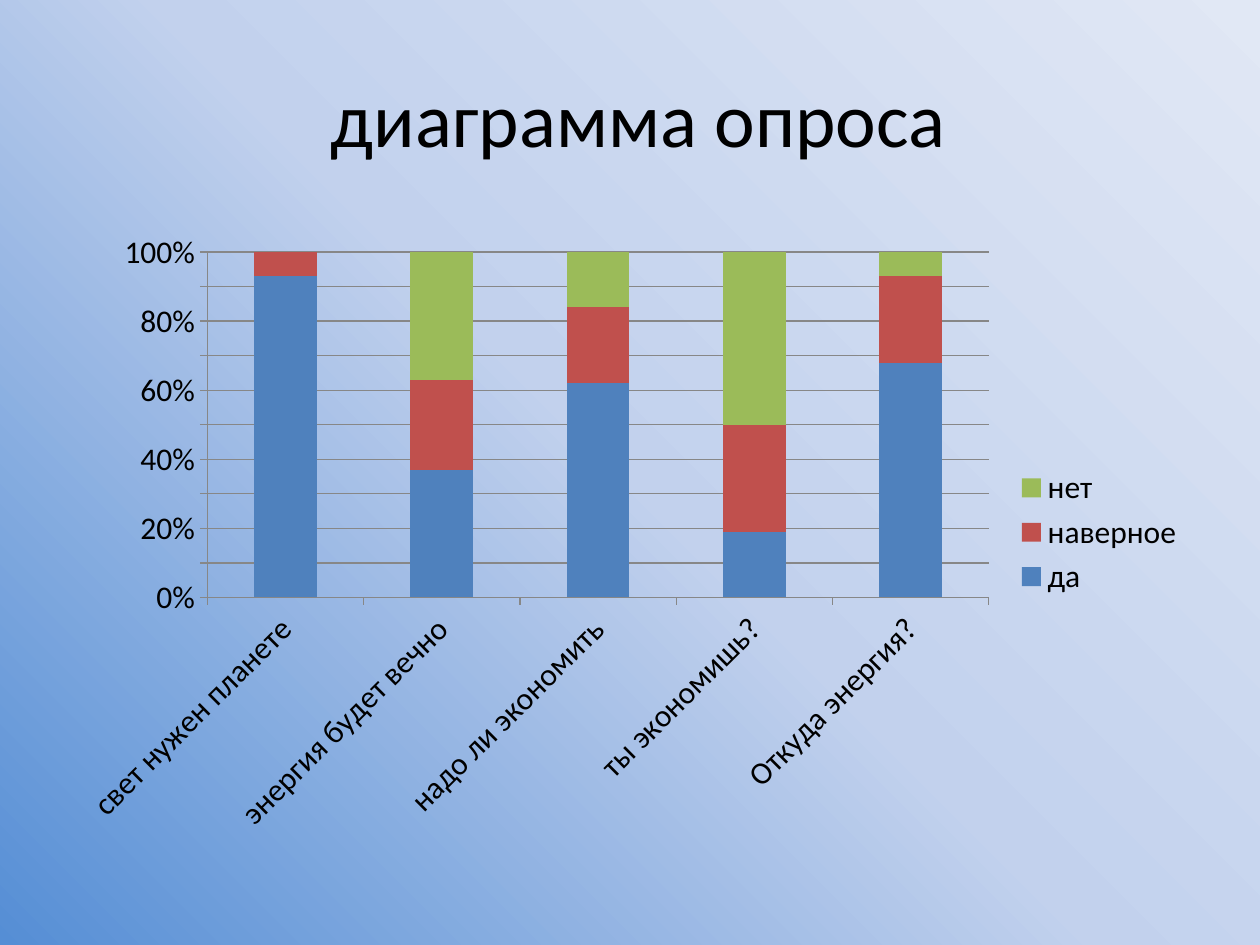
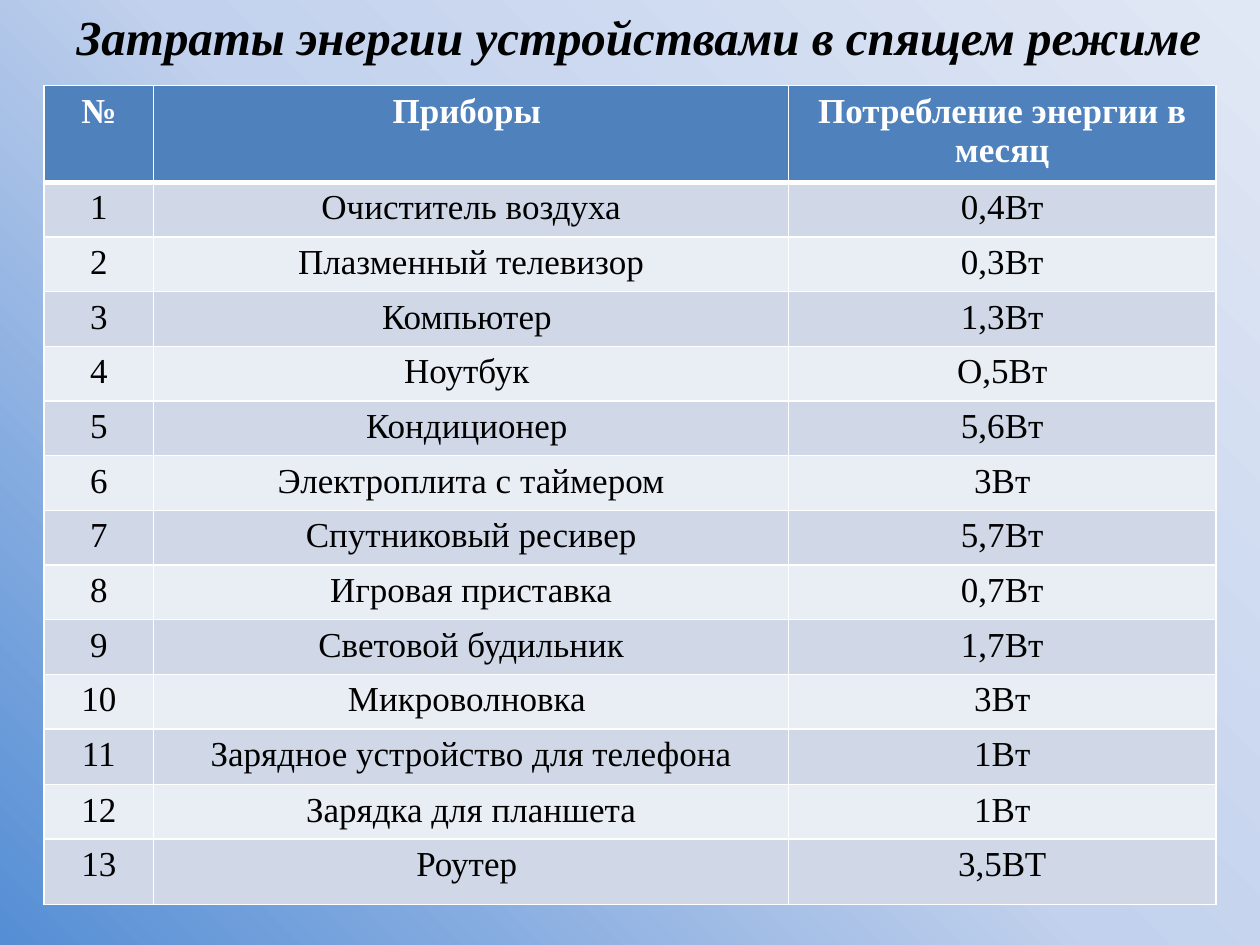
"""Builds two slides on energy saving: a survey chart and a table of standby consumption."""
import copy

import lxml.etree
import pptx
import pptx.chart.data
import pptx.dml.color
import pptx.enum.chart
import pptx.enum.text
import pptx.oxml.ns
import pptx.util
from pptx.util import Inches

RGBColor = pptx.dml.color.RGBColor
BLACK = RGBColor(0x00, 0x00, 0x00)
WHITE = RGBColor(0xFF, 0xFF, 0xFF)
GREY = RGBColor(0x87, 0x87, 0x87)
BLUE = RGBColor(0x4F, 0x81, 0xBD)
RED = RGBColor(0xC0, 0x50, 0x4D)
GREEN = RGBColor(0x9B, 0xBB, 0x59)
BAND_DARK = RGBColor(0xD0, 0xD8, 0xE8)
BAND_LIGHT = RGBColor(0xE9, 0xED, 0xF4)
BACKGROUND_STOPS = [
    (0, RGBColor(0x55, 0x8E, 0xD5)),
    (0.5, RGBColor(0xC2, 0xD1, 0xED)),
    (1, RGBColor(0xE1, 0xE8, 0xF5)),
]
SANS = "Calibri"
SERIF = "Times New Roman"
CENTER = pptx.enum.text.PP_ALIGN.CENTER
LEFT = pptx.enum.text.PP_ALIGN.LEFT


def write(frame, text, size, font=SERIF, color=BLACK, bold=False, italic=False, align=CENTER):
    paragraph = frame.paragraphs[0]
    paragraph.alignment = align
    run = paragraph.add_run()
    run.text = text
    run.font.name = font
    run.font.size = pptx.util.Pt(size)
    run.font.color.rgb = color
    run.font.bold = bold
    run.font.italic = italic


def set_borders(cell, bottom_width):
    properties = cell._tc.get_or_add_tcPr()
    widths = {"lnL": 1, "lnR": 1, "lnT": 1, "lnB": bottom_width}
    for position, (side, width) in enumerate(widths.items()):
        line = lxml.etree.Element(pptx.oxml.ns.qn(f"a:{side}"), w=str(pptx.util.Pt(width)))
        fill = lxml.etree.SubElement(line, pptx.oxml.ns.qn("a:solidFill"))
        lxml.etree.SubElement(fill, pptx.oxml.ns.qn("a:srgbClr"), val=str(WHITE))
        properties.insert(position, line)


presentation = pptx.Presentation()
presentation.slide_width = Inches(10)
presentation.slide_height = Inches(7.5)
blank_layout = presentation.slide_layouts[6]

master = presentation.slide_master
background = master.background.fill
background.gradient()
background.gradient_angle = 45
stop_list = next(master.element.iter(pptx.oxml.ns.qn("a:gsLst")))
stop_list.append(copy.deepcopy(stop_list[0]))
for stop, (position, color) in zip(background.gradient_stops, BACKGROUND_STOPS):
    stop.position = position
    stop.color.rgb = color

slide = presentation.slides.add_slide(blank_layout)
title = slide.shapes.add_textbox(Inches(0.5), Inches(0.3), Inches(9), Inches(1.25))
title.text_frame.word_wrap = True
title.text_frame.vertical_anchor = pptx.enum.text.MSO_ANCHOR.MIDDLE
write(title.text_frame, " диаграмма опроса", 44, font=SANS)

answers = [
    ("да", [93, 37, 62, 19, 68], BLUE),
    ("наверное", [7, 26, 22, 31, 25], RED),
    ("нет", [0, 37, 16, 50, 7], GREEN),
]
chart_data = pptx.chart.data.CategoryChartData()
chart_data.categories = [
    "свет нужен планете", "энергия будет вечно", "надо ли экономить",
    "ты экономишь?", "Откуда энергия?",
]
for name, values, color in answers:
    chart_data.add_series(name, values)
chart = slide.shapes.add_chart(
    pptx.enum.chart.XL_CHART_TYPE.COLUMN_STACKED_100,
    Inches(0.5), Inches(1.75), Inches(9), Inches(4.95), chart_data,
).chart
chart.font.name = SANS
chart.font.size = pptx.util.Pt(18)
chart.font.color.rgb = BLACK
chart.has_title = False
chart.has_legend = True
chart.legend.position = pptx.enum.chart.XL_LEGEND_POSITION.RIGHT
chart.legend.include_in_layout = False

plot = chart.plots[0]
plot.vary_by_categories = False
plot.gap_width = 150
plot.overlap = 100
for series, (name, values, color) in zip(plot.series, answers):
    series.format.fill.solid()
    series.format.fill.fore_color.rgb = color

chart.value_axis.has_major_gridlines = True
chart.value_axis.tick_labels.number_format = "0%"
chart.value_axis.tick_labels.number_format_is_linked = False
for lines in (chart.value_axis, chart.category_axis, chart.value_axis.major_gridlines):
    lines.format.line.color.rgb = GREY
    lines.format.line.width = pptx.util.Pt(0.75)

slide = presentation.slides.add_slide(blank_layout)
devices = [
    ("Очиститель воздуха", "0,4Вт"),
    ("Плазменный телевизор", "0,3Вт"),
    ("Компьютер ", "1,3Вт"),
    ("Ноутбук ", "О,5Вт"),
    ("Кондиционер ", "5,6Вт"),
    ("Электроплита с таймером", "3Вт"),
    ("Спутниковый ресивер", "5,7Вт"),
    ("Игровая приставка", "0,7Вт"),
    ("Световой будильник", "1,7Вт"),
    ("Микроволновка ", "3Вт"),
    ("Зарядное устройство для телефона", "1Вт"),
    ("Зарядка для планшета", "1Вт"),
    ("Роутер ", "3,5ВТ"),
]
rows = [("№", "Приборы ", "Потребление энергии в месяц")]
rows += [(str(number), *device) for number, device in enumerate(devices, 1)]
column_widths = [0.87, 5.04, 3.39]
row_heights = [0.75] + [0.42] * 10 + [0.44, 0.42, 0.52]

table = slide.shapes.add_table(
    len(rows), len(column_widths), Inches(0.35), Inches(0.68), Inches(9.3), Inches(6.5)
).table
for column, width in zip(table.columns, column_widths):
    column.width = Inches(width)
for row_index, (texts, height) in enumerate(zip(rows, row_heights)):
    table.rows[row_index].height = Inches(height)
    is_header = row_index == 0
    band = BLUE if is_header else BAND_DARK if row_index % 2 else BAND_LIGHT
    for cell, text in zip(table.rows[row_index].cells, texts):
        cell.fill.solid()
        cell.fill.fore_color.rgb = band
        set_borders(cell, 3 if is_header else 1)
        write(cell.text_frame, text, 20, color=WHITE if is_header else BLACK, bold=is_header)

heading = slide.shapes.add_textbox(Inches(0.51), 0, Inches(9.49), Inches(0.57))
heading.text_frame.word_wrap = True
heading.text_frame.auto_size = pptx.enum.text.MSO_AUTO_SIZE.SHAPE_TO_FIT_TEXT
write(heading.text_frame, "Затраты энергии устройствами в спящем режиме", 28,
      bold=True, italic=True, align=LEFT)

presentation.save("out.pptx")
